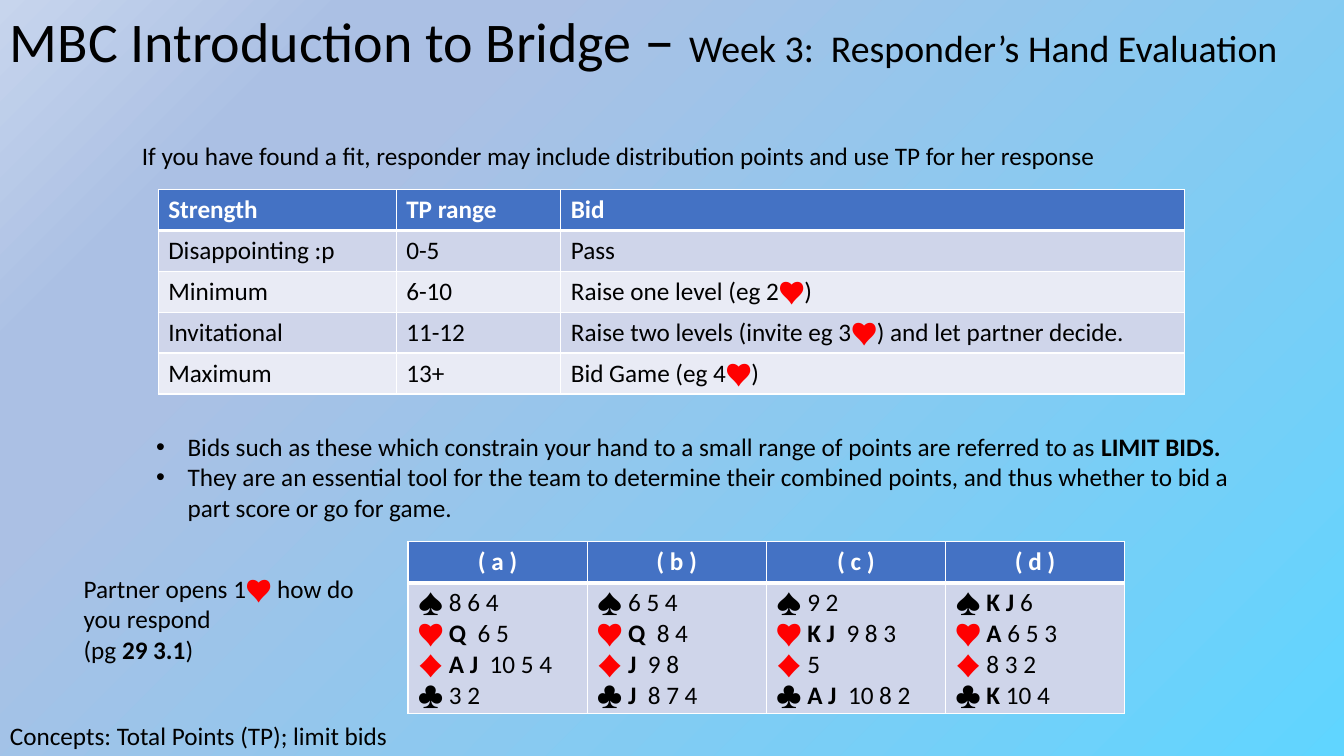
from itertools import groupby

from lxml.etree import SubElement
from pptx import Presentation
from pptx.enum.text import MSO_ANCHOR as Anchor, PP_ALIGN as Align
from pptx.oxml import parse_xml
from pptx.oxml.ns import nsdecls, qn
from pptx.dml.color import RGBColor
from pptx.util import Pt

COLORS = {
    "text": "000000", "white": "FFFFFF", "red": "FF0000",
    "header": "4472C4", "band": "CFD5EA", "light": "E9EBF5",
    "sky": "60D5FF", "lavender": "ABC0E4", "pale": "C7D5ED",
}
ROW_HEIGHT = 29.2


def add_text(paragraph, text, size=18, color="text"):
    """Write text as runs: *stars* mark bold, red suits colour themselves."""
    for index, part in enumerate(text.split("*")):
        for is_red, letters in groupby(part, key=lambda letter: letter in "♥♦"):
            run = paragraph.add_run()
            run.text = "".join(letters)
            run.font.name = "Calibri"
            run.font.size = Pt(size)
            run.font.bold = index % 2 == 1
            run.font.color.rgb = RGBColor.from_string(COLORS["red" if is_red else color])


def add_grid(left, top, widths, heights, rows, align):
    """Add a table with a header row, banded body and white borders."""
    table = slide.shapes.add_table(
        len(rows), len(widths), Pt(left), Pt(top), Pt(sum(widths)), Pt(sum(heights))).table
    for column, width in zip(table.columns, widths):
        column.width = Pt(width)
    for r, row in enumerate(rows):
        table.rows[r].height = Pt(heights[r])
        for c, content in enumerate(row):
            cell = table.cell(r, c)
            properties = cell._tc.get_or_add_tcPr()
            for side in ("lnL", "lnR", "lnT", "lnB"):
                thick = (r, side) in ((0, "lnB"), (1, "lnT"))
                line = SubElement(properties, qn("a:" + side), w=str(Pt(3 if thick else 1)))
                fill = SubElement(line, qn("a:solidFill"))
                SubElement(fill, qn("a:srgbClr"), val=COLORS["white"])
            shade = "header" if r == 0 else "band" if r % 2 else "light"
            cell.fill.solid()
            cell.fill.fore_color.rgb = RGBColor.from_string(COLORS[shade])
            for index, text in enumerate(content.split("\n")):
                frame = cell.text_frame
                paragraph = frame.add_paragraph() if index else frame.paragraphs[0]
                if r == 0:
                    paragraph.alignment = align
                    add_text(paragraph, f"*{text}*", color="white")
                else:
                    add_text(paragraph, text)


presentation = Presentation()
presentation.slide_width, presentation.slide_height = Pt(960), Pt(540)
slide = presentation.slides.add_slide(presentation.slide_layouts[6])

# Background: radial gradient spreading from the bottom right corner
stops = "".join(
    f'<a:gs pos="{position * 1000}"><a:srgbClr val="{COLORS[name]}"/></a:gs>'
    for position, name in ((0, "sky"), (74, "lavender"), (83, "lavender"), (100, "pale")))
slide._element.cSld.insert(0, parse_xml(
    f'<p:bg {nsdecls("p", "a")}><p:bgPr><a:gradFill rotWithShape="1"><a:gsLst>{stops}</a:gsLst>'
    '<a:path path="circle"><a:fillToRect l="100000" t="100000"/></a:path></a:gradFill>'
    '<a:effectLst/></p:bgPr></p:bg>'))

# Title
title = slide.shapes.add_textbox(0, 0, Pt(960), Pt(60.5)).text_frame
title.word_wrap = True
title.vertical_anchor = Anchor.MIDDLE
title.paragraphs[0].line_spacing = 0.9
for text, size in (("MBC Introduction to Bridge ", 40), ("– ", 44),
                   ("Week 3:  Responder’s Hand Evaluation", 27)):
    add_text(title.paragraphs[0], text, size)

# Text boxes: left, top, width, height, bulleted, paragraphs
text_boxes = [
    (94.3, 96.5, 787, 116.6, False,
     ["If you have found a fit, responder may include distribution points and use TP for her response"]),
    (0, 511, 291.6, 29, False, ["Concepts: Total Points (TP); limit bids"]),
    (52.6, 406, 226.8, 72.7, False,
     ["Partner opens 1♥ how do you respond", "(pg *29 3.1*)"]),
    (104.4, 304.6, 787, 72.7, True,
     ["Bids such as these which constrain your hand to a small range of points "
      "are referred to as *LIMIT BIDS.*",
      "They are an essential tool for the team to determine their combined points, "
      "and thus whether to bid a part score or go for game."]),
]
for left, top, width, height, bulleted, texts in text_boxes:
    frame = slide.shapes.add_textbox(Pt(left), Pt(top), Pt(width), Pt(height)).text_frame
    frame.word_wrap = True
    for index, text in enumerate(texts):
        paragraph = frame.add_paragraph() if index else frame.paragraphs[0]
        add_text(paragraph, text)
        if bulleted:
            properties = paragraph._p.get_or_add_pPr()
            properties.set("marL", str(Pt(22.5)))
            properties.set("indent", str(Pt(-22.5)))
            SubElement(properties, qn("a:buFont"), typeface="Arial")
            SubElement(properties, qn("a:buChar"), char="•")

# Responses by strength
add_grid(113, 135.4, [170, 117.6, 445.8], [ROW_HEIGHT] * 5, [
    ("Strength", "TP range", "Bid"),
    ("Disappointing :p", "0-5", "Pass"),
    ("Minimum", "6-10", "Raise one level (eg 2♥)"),
    ("Invitational", "11-12", "Raise two levels (invite eg 3♥) and let partner decide."),
    ("Maximum", "13+", "Bid Game (eg 4♥)"),
], Align.LEFT)

# Practice hands
add_grid(291.4, 387, [128] * 4, [ROW_HEIGHT, 93.2], [
    ("( a )", "( b )", "( c )", "( d )"),
    ("♠ 8 6 4\n♥ *Q*  6 5\n♦ *A J  *10 5 4\n♣ 3 2",
     "♠ 6 5 4\n♥ *Q*  8 4\n♦ *J*  9 8\n♣ *J * 8 7 4",
     "♠ 9 2\n♥ *K J  *9 8 3\n♦ 5\n♣ *A J  *10 8 2",
     "♠ *K J *6\n♥ *A* 6 5 3\n♦ 8 3 2\n♣ *K* 10 4"),
], Align.CENTER)

presentation.save("out.pptx")
